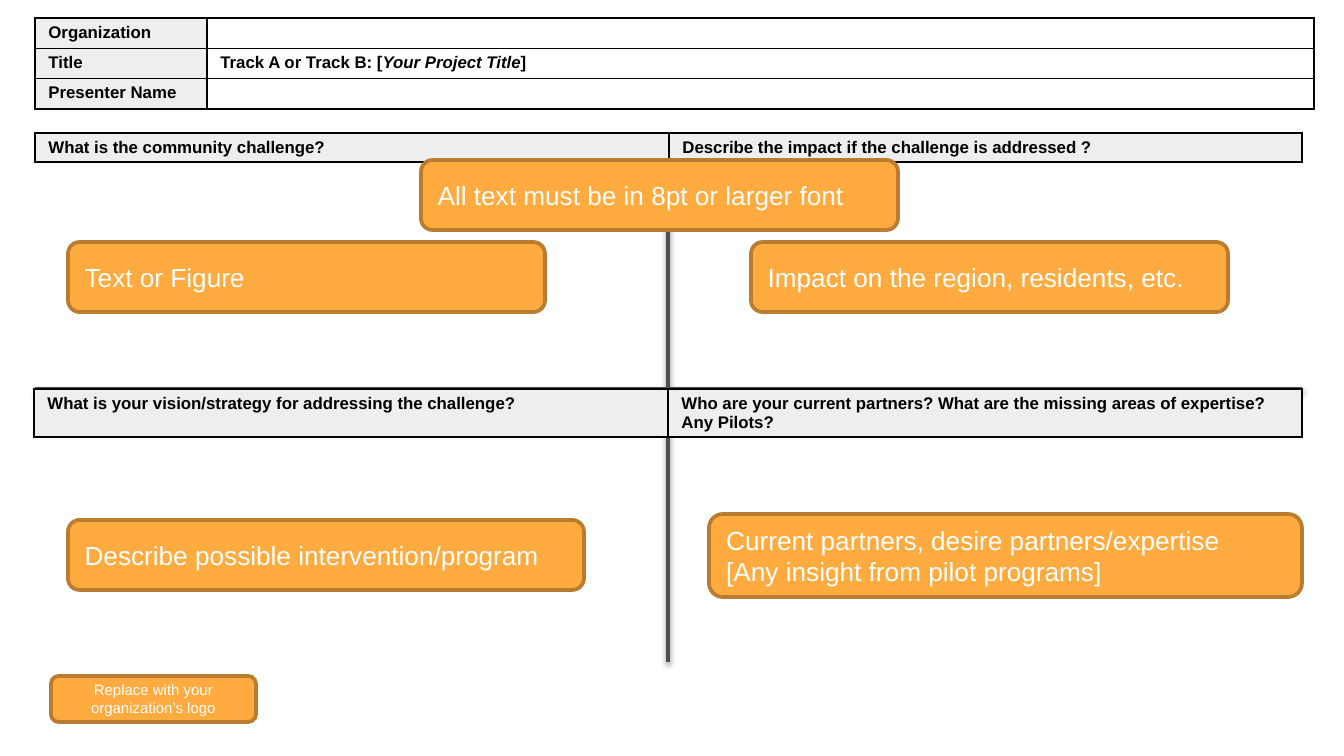
"""Build a one-slide project template with a heading table, four quadrants and hint callouts."""
from typing import NamedTuple

import lxml.etree
import pptx
import pptx.dml.color
import pptx.enum.shapes
import pptx.enum.text
import pptx.oxml.ns
import pptx.util

EMU_PER_PX = 9144000 / 1344
FONT = "Arial"
BLACK, WHITE, GREY = "000000", "FFFFFF", "EEEEEE"
RULE, ORANGE, BROWN = "4F4F4F", "FFAB40", "BA7C2E"
LEFT = pptx.enum.text.PP_ALIGN.LEFT
CENTER = pptx.enum.text.PP_ALIGN.CENTER


class Rule(NamedTuple):
    x1: int
    y1: int
    x2: int
    y2: int


class Grid(NamedTuple):
    x: int
    y: int
    cols: tuple[int, ...]
    row_height: int
    rows: tuple[tuple[str, ...], ...]


class Callout(NamedTuple):
    x: int
    y: int
    width: int
    height: int
    text: str
    size: int = 14
    align: pptx.enum.text.PP_ALIGN = LEFT


RULES = (Rule(668, 160, 668, 662), Rule(35, 389, 1302, 389))

GRIDS = (
    Grid(35, 18, (172, 1107), 30, (
        ("Organization", ""),
        ("Title", "Track A or Track B: [*Your Project Title*]"),
        ("Presenter Name", ""),
    )),
    Grid(35, 133, (634, 633), 29, (
        ("What is the community challenge?",
         "Describe the impact if the challenge is addressed ?"),
    )),
    Grid(34, 389, (634, 634), 48, (
        ("What is your vision/strategy for addressing the challenge?",
         "Who are your current partners? What are the missing areas of expertise? Any Pilots?"),
    )),
)

CALLOUTS = (
    Callout(51, 676, 205, 46, "Replace with your organization’s logo", 8, CENTER),
    Callout(421, 160, 477, 70, "All text must be in 8pt or larger font"),
    Callout(751, 242, 477, 70, "Impact on the region, residents, etc."),
    Callout(68, 520, 516, 70, "Describe possible intervention/program"),
    Callout(709, 514, 593, 83,
            "Current partners, desire partners/expertise\n[Any insight from pilot programs]"),
    Callout(68, 242, 477, 70, "Text or Figure"),
)


def px(n: int) -> pptx.util.Emu:
    """Turn pixels into EMU."""
    return pptx.util.Emu(round(n * EMU_PER_PX))


def rgb(value: str) -> pptx.dml.color.RGBColor:
    """Turn a hex string into a colour."""
    return pptx.dml.color.RGBColor.from_string(value)


def child(parent, tag: str, **attrs: str):
    """Append a DrawingML element and return it."""
    return lxml.etree.SubElement(parent, pptx.oxml.ns.qn(f"a:{tag}"), attrs)


def style_run(r, size: int, color: str, bold: bool = False, italic: bool = False) -> None:
    """Format one run of text."""
    r.font.name, r.font.size = FONT, pptx.util.Pt(size)
    r.font.bold, r.font.italic = bold, italic
    r.font.color.rgb = rgb(color)


def draw_rule(s, rule: Rule) -> None:
    """Draw a straight divider with a soft shadow."""
    sp = s.shapes.add_connector(pptx.enum.shapes.MSO_CONNECTOR.STRAIGHT, *map(px, rule))
    sp.line.color.rgb = rgb(RULE)
    sp.line.width = pptx.util.Pt(2.25)
    effects = child(sp._element.spPr, "effectLst")
    shadow = child(effects, "outerShdw", blurRad="39370", dist="20320", dir="5400000",
                   rotWithShape="0")
    child(child(shadow, "srgbClr", val=BLACK), "alpha", val="38000")


def fill_cell(cell, text: str, shaded: bool) -> None:
    """Write one table cell; text between asterisks is italic."""
    cell.margin_left = cell.margin_right = pptx.util.Inches(0.1)
    cell.margin_top = cell.margin_bottom = px(5)
    p = cell.text_frame.paragraphs[0]
    if text:
        for i, part in enumerate(text.split("*")):
            r = p.add_run()
            r.text = part
            style_run(r, 9, BLACK, bold=True, italic=i % 2 == 1)
    else:
        child(p._p, "endParaRPr", sz="900")
    tc_pr = cell._tc.get_or_add_tcPr()
    for side in ("lnL", "lnR", "lnT", "lnB"):
        child(child(child(tc_pr, side, w="12700"), "solidFill"), "srgbClr", val=BLACK)
    if shaded:
        cell.fill.solid()
        cell.fill.fore_color.rgb = rgb(GREY)
    else:
        cell.fill.background()


def draw_grid(s, grid: Grid) -> None:
    """Draw a bordered table whose heading cells are shaded."""
    n = len(grid.rows)
    table = s.shapes.add_table(n, len(grid.cols), px(grid.x), px(grid.y),
                               px(sum(grid.cols)), px(n * grid.row_height)).table
    table.first_row = table.horz_banding = False
    for column, width in zip(table.columns, grid.cols):
        column.width = px(width)
    for i, texts in enumerate(grid.rows):
        table.rows[i].height = px(grid.row_height)
        for j, text in enumerate(texts):
            fill_cell(table.cell(i, j), text, shaded=j == 0 or n == 1)


def draw_callout(s, callout: Callout) -> None:
    """Draw a rounded orange hint box."""
    sp = s.shapes.add_shape(pptx.enum.shapes.MSO_SHAPE.ROUNDED_RECTANGLE, *map(px, callout[:4]))
    sp.shadow.inherit = False
    sp.fill.solid()
    sp.fill.fore_color.rgb = rgb(ORANGE)
    sp.line.color.rgb = rgb(BROWN)
    sp.line.width = pptx.util.Pt(2)
    tf = sp.text_frame
    tf.text = callout.text
    tf.word_wrap = True
    tf.vertical_anchor = pptx.enum.text.MSO_ANCHOR.MIDDLE
    for p in tf.paragraphs:
        p.alignment = callout.align
        for r in p.runs:
            style_run(r, callout.size, WHITE)


def main() -> None:
    """Build and save the slide."""
    prs = pptx.Presentation()
    prs.slide_width, prs.slide_height = px(1344), px(756)
    s = prs.slides.add_slide(prs.slide_layouts[6])
    for rule in RULES:
        draw_rule(s, rule)
    for grid in GRIDS:
        draw_grid(s, grid)
    for callout in CALLOUTS:
        draw_callout(s, callout)
    prs.save("out.pptx")


if __name__ == "__main__":
    main()
